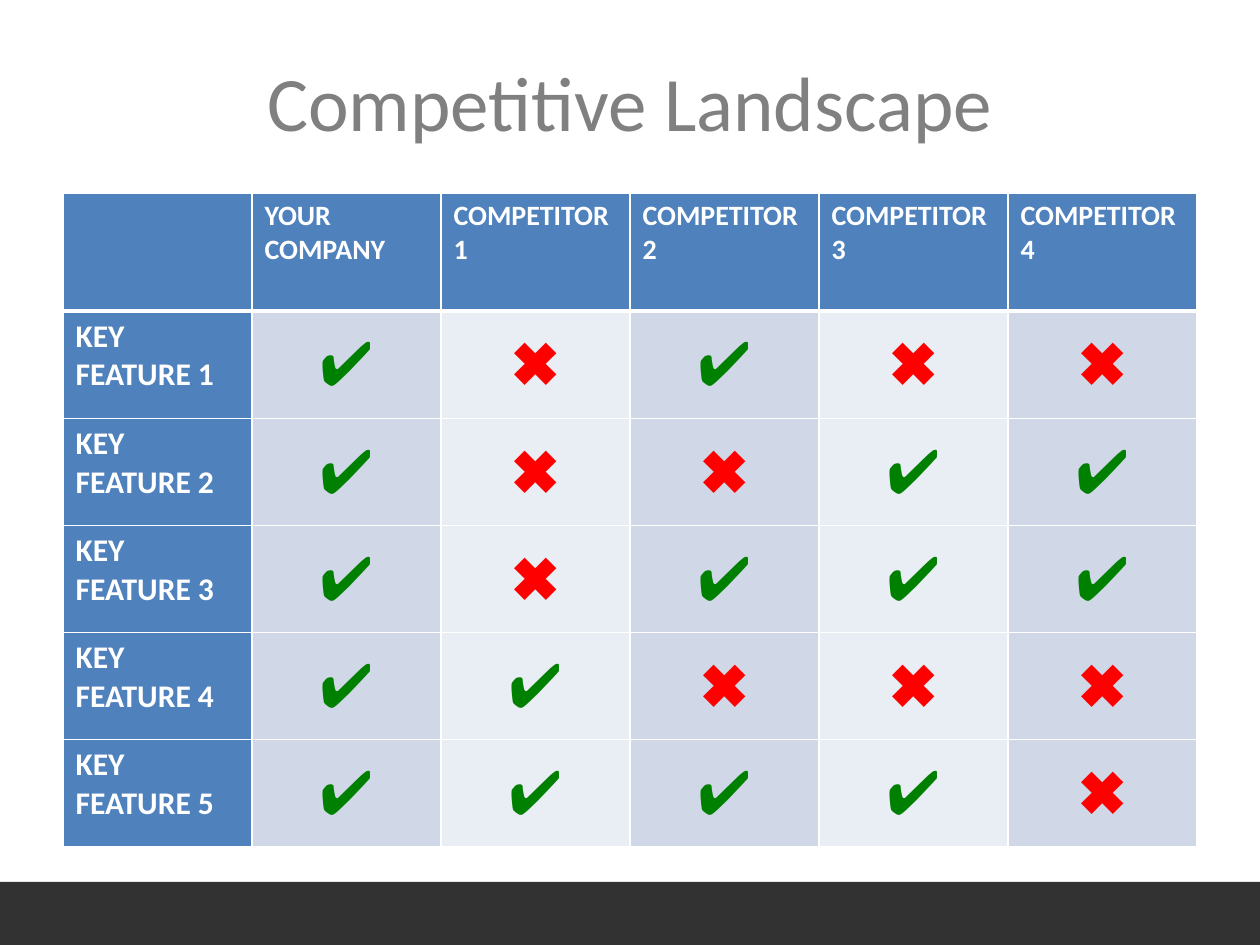
"""Builds a competitive landscape slide with a feature comparison table."""
from dataclasses import dataclass

from lxml.etree import SubElement
from pptx import Presentation
from pptx.dml.color import RGBColor
from pptx.enum.shapes import MSO_SHAPE
from pptx.enum.text import MSO_ANCHOR, PP_ALIGN
from pptx.oxml.ns import qn
from pptx.slide import Slide
from pptx.table import _Cell
from pptx.text.text import _Paragraph
from pptx.util import Inches, Pt

WIDTH, HEIGHT = 10, 7.5
MARGIN = 0.05 * WIDTH
HEADER_ROW, FEATURE_ROW = 0.94, 0.85


@dataclass(frozen=True)
class Style:
    size: float
    color: str
    font: str = "Calibri"
    bold: bool = False
    align: PP_ALIGN = PP_ALIGN.LEFT
    anchor: MSO_ANCHOR = MSO_ANCHOR.TOP


@dataclass(frozen=True)
class Theme:
    title: Style = Style(44, "808080", align=PP_ALIGN.CENTER)
    header: Style = Style(16, "FFFFFF", bold=True)
    feature: Style = Style(18, "FFFFFF", bold=True)
    check: Style = Style(35, "008000", "Arial", False, PP_ALIGN.CENTER, MSO_ANCHOR.MIDDLE)
    cross: Style = Style(35, "FF0000", "Arial", False, PP_ALIGN.CENTER, MSO_ANCHOR.MIDDLE)
    footer: str = "323232"
    heading_fill: str = "4F81BD"
    bands: tuple[str, str] = ("D0D8E8", "E9EDF4")
    border: str = "FFFFFF"


@dataclass(frozen=True)
class Feature:
    name: str
    marks: str


THEME = Theme()
HEADERS = ["", "YOUR COMPANY"] + [f"COMPETITOR {number}" for number in range(1, 5)]
MARKS = ["✔✖✔✖✖", "✔✖✖✔✔", "✔✖✔✔✔", "✔✔✖✖✖", "✔✔✔✔✖"]
FEATURES = [Feature(f"KEY FEATURE {number}", marks) for number, marks in enumerate(MARKS, 1)]


def write(para: _Paragraph, text: str, style: Style) -> None:
    """Puts styled text in a paragraph."""
    para.text = text
    para.alignment = style.align
    para.font.name = style.font
    para.font.size = Pt(style.size)
    para.font.bold = style.bold
    para.font.color.rgb = RGBColor.from_string(style.color)


def set_borders(cell: _Cell, top: float, bottom: float) -> None:
    """Draws the four borders of a cell, before its fill."""
    properties = cell._tc.get_or_add_tcPr()
    for side, width in (("L", 1), ("R", 1), ("T", top), ("B", bottom)):
        line = SubElement(properties, qn(f"a:ln{side}"), w=str(Pt(width)))
        fill = SubElement(line, qn("a:solidFill"))
        SubElement(fill, qn("a:srgbClr"), val=THEME.border)


def fill_cell(cell: _Cell, text: str, style: Style, color: str, row: int) -> None:
    """Gives a cell its borders, fill and text."""
    set_borders(cell, 3 if row == 1 else 1, 3 if row == 0 else 1)
    cell.fill.solid()
    cell.fill.fore_color.rgb = RGBColor.from_string(color)
    cell.vertical_anchor = style.anchor
    write(cell.text_frame.paragraphs[0], text, style)


def add_footer(page: Slide) -> None:
    """Adds the dark bar along the bottom edge."""
    bar = page.shapes.add_shape(
        MSO_SHAPE.RECTANGLE, 0, Inches(HEIGHT - 0.5), Inches(WIDTH), Inches(0.5))
    bar.shadow.inherit = False
    bar.fill.solid()
    bar.fill.fore_color.rgb = RGBColor.from_string(THEME.footer)
    bar.line.fill.background()


def add_title(page: Slide, text: str) -> None:
    """Adds the centred slide title."""
    box = page.shapes.add_textbox(
        Inches(MARGIN), Inches(0.17), Inches(WIDTH - 2 * MARGIN), Inches(1.25))
    box.text_frame.word_wrap = True
    box.text_frame.vertical_anchor = MSO_ANCHOR.MIDDLE
    write(box.text_frame.paragraphs[0], text, THEME.title)


def add_comparison(page: Slide) -> None:
    """Adds the table of features by company."""
    heights = [HEADER_ROW] + [FEATURE_ROW] * len(FEATURES)
    table = page.shapes.add_table(
        len(heights), len(HEADERS), Inches(MARGIN), Inches(1.53),
        Inches(WIDTH - 2 * MARGIN), Inches(sum(heights))).table
    for row, height in zip(table.rows, heights):
        row.height = Inches(height)
    for column, header in enumerate(HEADERS):
        fill_cell(table.cell(0, column), header, THEME.header, THEME.heading_fill, 0)
    for row, feature in enumerate(FEATURES, 1):
        fill_cell(table.cell(row, 0), feature.name, THEME.feature, THEME.heading_fill, row)
        for column, mark in enumerate(feature.marks, 1):
            style = THEME.check if mark == "✔" else THEME.cross
            band = THEME.bands[(column - 1) % 2]
            fill_cell(table.cell(row, column), mark, style, band, row)


def main() -> None:
    """Builds and saves the slide."""
    deck = Presentation()
    deck.slide_width, deck.slide_height = Inches(WIDTH), Inches(HEIGHT)
    page = deck.slides.add_slide(deck.slide_layouts[6])
    add_footer(page)
    add_title(page, "Competitive Landscape")
    add_comparison(page)
    deck.save("out.pptx")


if __name__ == "__main__":
    main()
